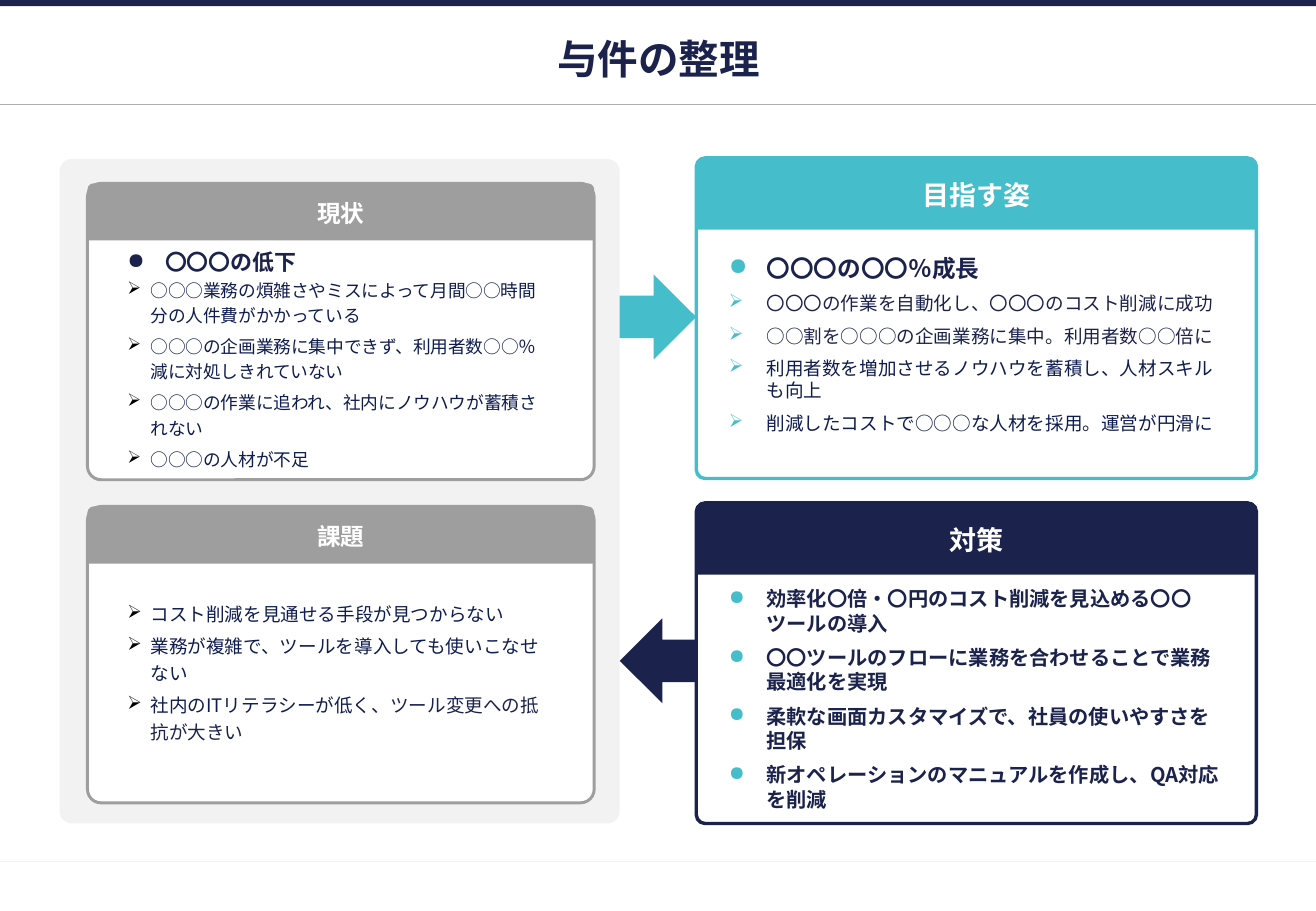
from lxml import etree
from pptx import Presentation
from pptx import util as u
from pptx.dml.color import RGBColor
from pptx.enum import shapes, text
from pptx.oxml.ns import qn

WIDTH, HEIGHT = 10.83, 7.5
FONT = "Noto Sans CJK JP"
COLOURS = {
    "navy": "1B224C", "ink": "0F1C50", "teal": "46BDCA", "grey": "9E9E9E",
    "pale": "F2F2F2", "rule": "AFAFAF", "white": "FFFFFF", "black": "000000",
}

# Two columns of equal width, with the arrows in the gutter between them
MARGIN, COLUMN, GUTTER = 0.49, 4.61, 0.63
RIGHT = MARGIN + COLUMN + GUTTER
INSET = 0.23
NARROW = COLUMN - 2 * INSET + 0.02
ARROW_HEIGHT = 0.7

CARD_FORMATS = {
    "outer": dict(left=RIGHT, width=COLUMN, height=2.64, header=0.59,
                  corner=0.028, line=2, size=16, text_inset=0.17),
    "inner": dict(left=MARGIN + INSET, width=NARROW, height=2.44, header=0.47,
                  corner=0.046, line=1.75, size=14, text_inset=INSET),
}

WIDE_GAP = dict(space_before=u.Pt(6))
TIGHT_GAP = dict(line_spacing=1.2, space_after=u.Pt(3.2))
ITEM_FORMATS = {
    "status head": dict(bullet="●", bullet_colour="navy", indent=0.31, gap=WIDE_GAP, size=13, bold=True),
    "status": dict(bullet="➢", bullet_colour="black", indent=0.19, gap=TIGHT_GAP, size=10.5, bold=False),
    "issue": dict(bullet="➢", bullet_colour="black", indent=0.19, gap=TIGHT_GAP, size=11, bold=False),
    "goal head": dict(bullet="●", bullet_colour="teal", indent=0.31, gap=WIDE_GAP, size=14, bold=True),
    "goal": dict(bullet="➢", bullet_colour="teal", indent=0.31, gap=WIDE_GAP, size=11, bold=False),
    "measure": dict(bullet="●", bullet_colour="teal", indent=0.31, gap=WIDE_GAP, size=12, bold=True),
}

# heading, card format, colour, card top, (text top, text height), items;
# an item is its format followed by (text, colour) pairs
CARDS = [
    ("現状", "inner", "grey", 1.51, (2.0, 1.92), [
        ("status head", ("〇〇〇の低下", "navy")),
        ("status", ("○○○業務の煩雑さやミスによって月間○○時間分の人件費がかかっている", "ink")),
        ("status", ("○○○の企画業務に集中できず、利用者数○○％減に対処しきれていない", "ink")),
        ("status", ("○○○の作業に追われ、社内にノウハウが蓄積されない", "ink")),
        ("status", ("○○○の人材が不足", "ink")),
    ]),
    ("課題", "inner", "grey", 4.17, (4.88, 1.28), [
        ("issue", ("コスト削減を見通せる手段が見つからない", "ink")),
        ("issue", ("業務が複雑で、ツールを導入しても使いこなせない", "ink")),
        ("issue", ("社内のITリテラシーが低く、", "ink"), ("ツール変更への抵抗が大きい", "navy")),
    ]),
    ("目指す姿", "outer", "teal", 1.3, (2.04, 1.6), [
        ("goal head", ("〇〇〇の〇〇％成長", "navy")),
        ("goal", ("〇〇〇の作業を自動化し、〇〇〇のコスト削減に成功", "navy")),
        ("goal", ("○○割を○○○の企画業務に集中。利用者数○○倍に", "navy")),
        ("goal", ("利用者数を増加させるノウハウを蓄積し、人材スキルも向上", "ink")),
        ("goal", ("削減したコストで○○○な人材を採用。運営が円滑に", "ink")),
    ]),
    ("対策", "outer", "navy", 4.14, (4.78, 1.97), [
        ("measure", ("効率化〇倍・〇円のコスト削減を見込める〇〇ツールの導入", "navy")),
        ("measure", ("〇〇ツールのフローに業務を合わせることで業務最適化を実現", "navy")),
        ("measure", ("柔軟な画面カスタマイズで、社員の使いやすさを担保", "navy")),
        ("measure", ("新オペレーションのマニュアルを作成し、QA対応を削減", "navy")),
    ]),
]


def rgb(colour):
    return RGBColor.from_string(COLOURS[colour])


def box(left, top, width, height):
    return [u.Inches(length) for length in (left, top, width, height)]


def set_values(target, values):
    for name, value in values.items():
        setattr(target, name, value)


def add_run(paragraph, words, size, colour, bold):
    run = paragraph.add_run()
    run.text = words
    set_values(run.font, dict(name=FONT, size=u.Pt(size), bold=bold))
    run.font.color.rgb = rgb(colour)
    # East Asian glyphs take their typeface from a separate element
    etree.SubElement(run.font._element, qn("a:ea"), typeface=FONT)


def add_centred_text(shape, words, size, colour):
    frame = shape.text_frame
    set_values(frame, dict(vertical_anchor=text.MSO_ANCHOR.MIDDLE, word_wrap=True,
                           auto_size=text.MSO_AUTO_SIZE.NONE))
    paragraph = frame.paragraphs[0]
    paragraph.alignment = text.PP_ALIGN.CENTER
    add_run(paragraph, words, size, colour, True)


def add_block(slide, kind, place, fill, line=None, line_width=0, adjustments=()):
    block = slide.shapes.add_shape(kind, *box(*place))
    block.shadow.inherit = False
    block.fill.solid()
    block.fill.fore_color.rgb = rgb(fill)
    if line:
        block.line.color.rgb = rgb(line)
        block.line.width = u.Pt(line_width)
    else:
        block.line.fill.background()
    for index, value in enumerate(adjustments):
        block.adjustments[index] = value
    return block


def add_rule(slide, top, colour):
    rule = slide.shapes.add_connector(
        shapes.MSO_CONNECTOR.STRAIGHT, 0, u.Inches(top), u.Inches(WIDTH), u.Inches(top))
    rule.line.color.rgb = rgb(colour)
    rule.line.width = u.Pt(0.75)
    etree.SubElement(rule._element.spPr, qn("a:effectLst"))


def add_bullet(paragraph, mark, colour, indent):
    properties = paragraph._p.get_or_add_pPr()
    properties.set("marL", str(u.Inches(indent)))
    properties.set("indent", str(-u.Inches(indent)))
    bullet_colour = etree.SubElement(properties, qn("a:buClr"))
    etree.SubElement(bullet_colour, qn("a:srgbClr"), val=COLOURS[colour])
    etree.SubElement(properties, qn("a:buChar"), char=mark)


def add_list(slide, place, items):
    frame = slide.shapes.add_textbox(*box(*place)).text_frame
    set_values(frame, dict(word_wrap=True, auto_size=text.MSO_AUTO_SIZE.SHAPE_TO_FIT_TEXT))
    for index, (kind, *runs) in enumerate(items):
        style = ITEM_FORMATS[kind]
        paragraph = frame.add_paragraph() if index else frame.paragraphs[0]
        add_bullet(paragraph, style["bullet"], style["bullet_colour"], style["indent"])
        set_values(paragraph, style["gap"])
        if index == 0:
            paragraph.space_before = u.Pt(0)
        for words, colour in runs:
            add_run(paragraph, words, style["size"], colour, style["bold"])


def add_card(slide, heading, kind, colour, top, text_rows, items):
    style = CARD_FORMATS[kind]
    left, width, inset = style["left"], style["width"], style["text_inset"]
    add_block(slide, shapes.MSO_SHAPE.ROUNDED_RECTANGLE, (left, top, width, style["height"]),
              "white", colour, style["line"], [style["corner"]])
    header = add_block(slide, shapes.MSO_SHAPE.ROUND_2_SAME_RECTANGLE,
                       (left, top, width, style["header"]), colour, adjustments=[0.108, 0])
    add_centred_text(header, heading, style["size"], "white")
    text_top, text_height = text_rows
    add_list(slide, (left + inset, text_top, width - 2 * inset, text_height), items)


def add_arrow(slide, top, colour, rotation):
    arrow = add_block(slide, shapes.MSO_SHAPE.RIGHT_ARROW,
                      (MARGIN + COLUMN, top, GUTTER, ARROW_HEIGHT), colour,
                      adjustments=[0.5, 0.557])
    arrow.rotation = rotation


def format_title(slide, words):
    title = slide.shapes.title
    place = box(0.5, 0.29, WIDTH - 2 * 0.5 + 0.01, 0.39)
    set_values(title, dict(zip(("left", "top", "width", "height"), place)))
    margin = u.Inches(0.04)
    set_values(title.text_frame, dict(margin_left=margin, margin_right=margin,
                                      margin_top=margin, margin_bottom=u.Inches(0.05)))
    add_centred_text(title, words, 24, "navy")


def main():
    deck = Presentation()
    set_values(deck, dict(slide_width=u.Inches(WIDTH), slide_height=u.Inches(HEIGHT)))
    slide = deck.slides.add_slide(deck.slide_layouts.get_by_name("Title Only"))

    add_rule(slide, 7.09, "pale")
    add_block(slide, shapes.MSO_SHAPE.RECTANGLE, (0, 0, WIDTH, 0.05), "navy")
    add_rule(slide, 0.86, "rule")
    format_title(slide, "与件の整理")

    add_block(slide, shapes.MSO_SHAPE.ROUNDED_RECTANGLE, (MARGIN, 1.31, COLUMN, 5.47),
              "pale", adjustments=[0.022])
    for card in CARDS:
        add_card(slide, *card)
    add_arrow(slide, 2.26, "teal", 0)
    add_arrow(slide, 5.09, "navy", 180)
    deck.save("out.pptx")


if __name__ == "__main__":
    main()
